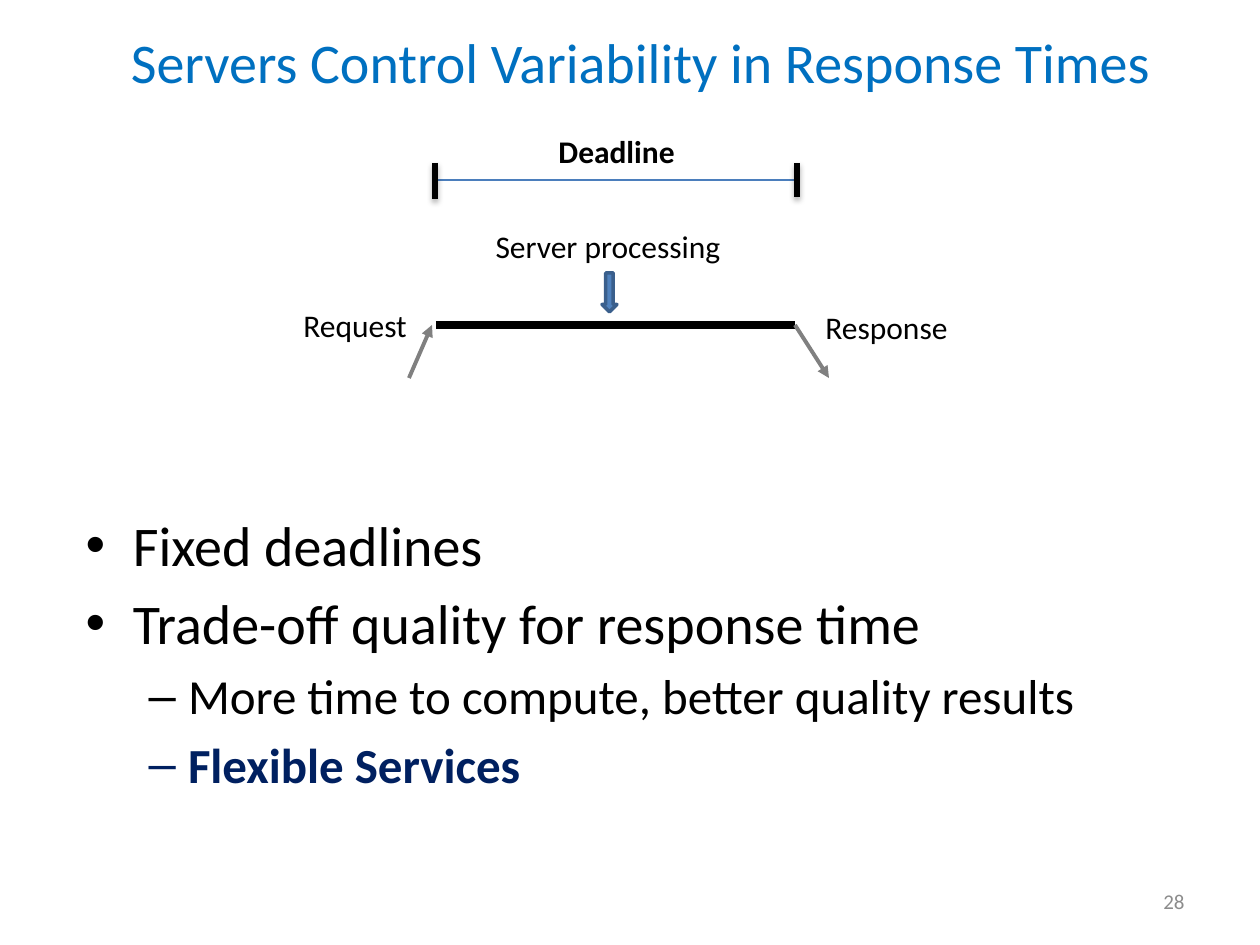
"""Builds the slide on how servers control variability in response times."""
import pptx
import pptx.dml.color
import pptx.enum.shapes
import pptx.enum.text
import pptx.oxml
import pptx.oxml.ns
import pptx.util

PX = 914400 / 126
RGB = pptx.dml.color.RGBColor
BLACK = RGB(0x00, 0x00, 0x00)
TITLE_BLUE = RGB(0x00, 0x70, 0xC0)
NAVY = RGB(0x00, 0x20, 0x60)
ARROW_GRAY = RGB(0x80, 0x80, 0x80)
NUMBER_GRAY = RGB(0x8C, 0x8C, 0x8C)
SPAN_BLUE = RGB(0x4B, 0x7E, 0xBC)
FILL_BLUE = RGB(0x4F, 0x81, 0xBD)
EDGE_BLUE = RGB(0x3A, 0x5F, 0x8C)
ALIGN = pptx.enum.text.PP_ALIGN
MIDDLE = pptx.enum.text.MSO_ANCHOR.MIDDLE
NS = pptx.oxml.ns.nsdecls("a")
NO_SHADOW = f"<a:effectLst {NS}/>"
TICK_SHADOW = (
    f'<a:effectLst {NS}><a:outerShdw blurRad="40000" dist="23000" dir="5400000" rotWithShape="0">'
    '<a:srgbClr val="000000"><a:alpha val="35000"/></a:srgbClr></a:outerShdw></a:effectLst>'
)


def emu(*lengths):
    return [pptx.util.Emu(round(length * PX)) for length in lengths]


def add_run(paragraph, text, size, color, bold=False):
    run = paragraph.add_run()
    run.text = text
    run.font.name = "Calibri"
    run.font.size = pptx.util.Pt(size)
    run.font.color.rgb = color
    run.font.bold = bold


prs = pptx.Presentation()
prs.slide_width, prs.slide_height = emu(1260, 945)
slide = prs.slides.add_slide(prs.slide_layouts[1])
shapes = slide.shapes

title = shapes.title
title.left, title.top, title.width, title.height = emu(53, 6, 1176, 110)
title.text_frame.vertical_anchor = MIDDLE
heading = title.text_frame.paragraphs[0]
heading.alignment = ALIGN.CENTER
add_run(heading, "Servers Control Variability in Response Times", 32, TITLE_BLUE)

points = slide.placeholders[1]
points.left, points.top, points.width, points.height = emu(73, 504, 1134, 315)
for index, (text, level, size, color, bold) in enumerate([
    ("Fixed deadlines", 0, 32, BLACK, False),
    ("Trade-off quality for response time", 0, 32, BLACK, False),
    ("More time to compute, better quality results", 1, 28, BLACK, False),
    ("Flexible Services", 1, 28, NAVY, True),
]):
    frame = points.text_frame
    point = frame.add_paragraph() if index else frame.paragraphs[0]
    point.level = level
    add_run(point, text, size, color, bold)

START, END, PROCESSING_Y, DEADLINE_Y = 435, 797, 325, 180
for ends, color, weight, effect, arrow in [
    ((START + 1, PROCESSING_Y, END - 2, PROCESSING_Y), BLACK, 4.5, NO_SHADOW, False),
    ((409, 378, 432, PROCESSING_Y), ARROW_GRAY, 2.25, NO_SHADOW, True),
    ((END - 2, PROCESSING_Y, 829, 378), ARROW_GRAY, 2.25, NO_SHADOW, True),
    ((START, DEADLINE_Y, END, DEADLINE_Y), SPAN_BLUE, 0.75, NO_SHADOW, False),
    ((START, 163, START, 199), BLACK, 3, TICK_SHADOW, False),
    ((END, 163, END, 197), BLACK, 3, TICK_SHADOW, False),
]:
    stroke = shapes.add_connector(pptx.enum.shapes.MSO_CONNECTOR.STRAIGHT, *emu(*ends))
    stroke.line.color.rgb = color
    stroke.line.width = pptx.util.Pt(weight)
    if arrow:
        stroke.line._get_or_add_ln().append(
            pptx.oxml.parse_xml(f'<a:tailEnd {NS} type="triangle"/>'))
    stroke._element.spPr.append(pptx.oxml.parse_xml(effect))

for text, box, bold, alignment in [
    ("Request", (291, 300, 130, 50), False, ALIGN.LEFT),
    ("Response", (813, 302, 149, 50), False, ALIGN.LEFT),
    ("Deadline", (546, 126, 142, 50), True, ALIGN.LEFT),
    ("Server processing", (480, 221, 256, 50), False, ALIGN.CENTER),
]:
    label = shapes.add_textbox(*emu(*box)).text_frame
    label.word_wrap = False
    label.auto_size = pptx.enum.text.MSO_AUTO_SIZE.SHAPE_TO_FIT_TEXT
    label.paragraphs[0].alignment = alignment
    add_run(label.paragraphs[0], text, 18, BLACK, bold)

pointer = shapes.add_shape(pptx.enum.shapes.MSO_SHAPE.DOWN_ARROW, *emu(602, 273, 15, 39))
pointer.shadow.inherit = False
pointer.fill.solid()
pointer.fill.fore_color.rgb = FILL_BLUE
pointer.line.color.rgb = EDGE_BLUE
pointer.line.width = pptx.util.Pt(2)

page_number = shapes.add_textbox(*emu(903, 876, 294, 50)).text_frame
page_number.word_wrap = True
page_number.vertical_anchor = MIDDLE
page_number.paragraphs[0].alignment = ALIGN.RIGHT
add_run(page_number.paragraphs[0], "28", 12, NUMBER_GRAY)

prs.save("out.pptx")
